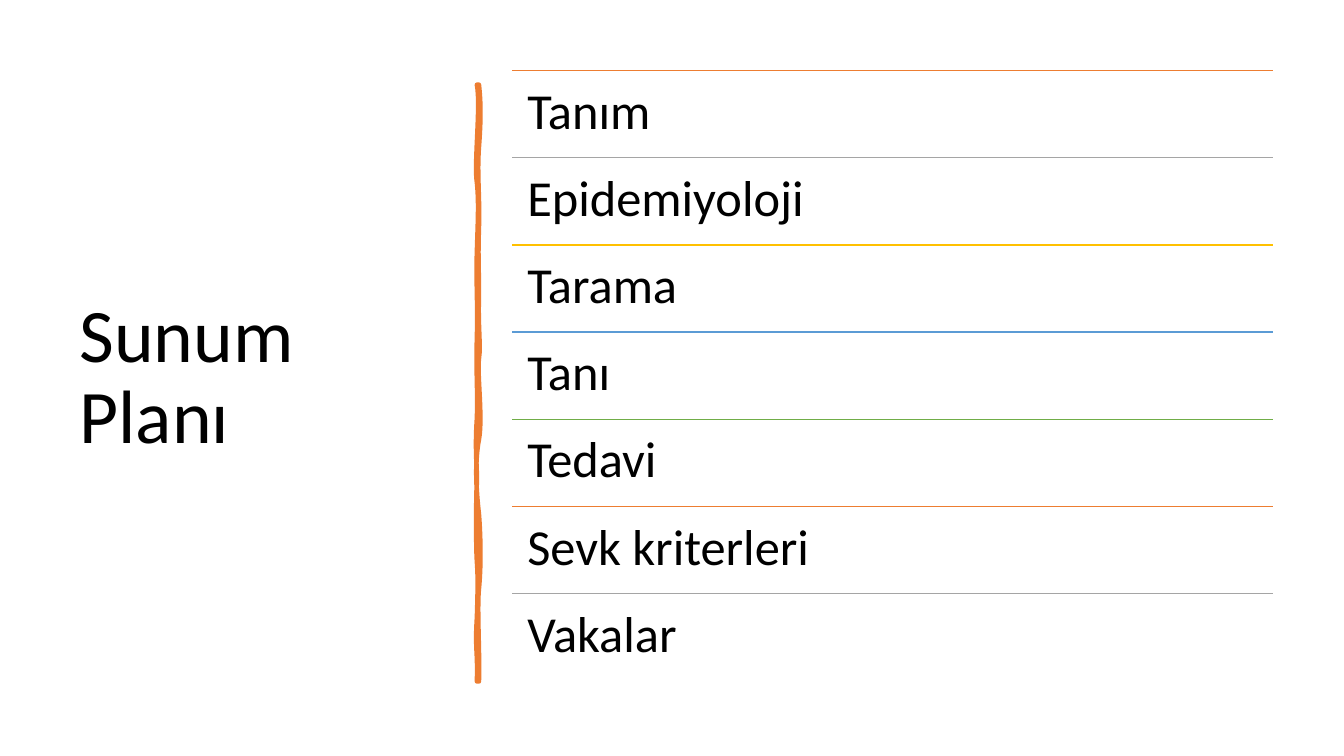
"""Builds the presentation plan slide: a title, a brush stroke and a ruled list."""
from itertools import cycle

from lxml import etree
from pptx import Presentation
from pptx import util as u
from pptx.dml.color import RGBColor
from pptx.enum import shapes, text
from pptx.oxml import ns

TITLE = "Sunum Planı"
TOPICS = ["Tanım", "Epidemiyoloji", "Tarama", "Tanı", "Tedavi", "Sevk kriterleri", "Vakalar"]
THEME = {
    "font": "Calibri", "title": 54, "topic": 36, "text": "000000", "stroke": "ED7D31",
    "rules": ["ED7D31", "A5A5A5", "FFC000", "5B9BD5", "70AD47"],
    "rule_width": 1, "stroke_width": 3.25,
}
TITLE_BOX = (0.69, 0.7, 3.74, 6.11)
LIST_LEFT, LIST_TOP, LIST_WIDTH, ROW_HEIGHT = 5.08, 0.7, 7.55, 0.865
STROKE_START = (4.75, 0.84)
STROKE_CURVES = [
    ((4.77, 1.02), (4.77, 1.19), (4.75, 1.46)),
    ((4.73, 1.73), (4.76, 1.95), (4.75, 2.26)),
    ((4.74, 2.57), (4.75, 2.62), (4.75, 2.94)),
    ((4.74, 3.25), (4.77, 3.42), (4.75, 3.56)),
    ((4.73, 3.7), (4.79, 4.14), (4.75, 4.36)),
    ((4.71, 4.57), (4.72, 4.84), (4.75, 5.1)),
    ((4.77, 5.36), (4.77, 5.64), (4.75, 5.84)),
    ((4.73, 6.03), (4.76, 6.5), (4.75, 6.76)),
    ((4.74, 6.76), (4.73, 6.76), (4.73, 6.76)),
    ((4.74, 6.46), (4.71, 6.44), (4.73, 6.13)),
    ((4.74, 5.83), (4.74, 5.7), (4.73, 5.57)),
    ((4.72, 5.44), (4.72, 4.95), (4.73, 4.77)),
    ((4.73, 4.59), (4.71, 4.45), (4.73, 4.15)),
    ((4.74, 3.86), (4.72, 3.73), (4.73, 3.35)),
    ((4.74, 2.98), (4.72, 2.81), (4.73, 2.5)),
    ((4.74, 2.18), (4.75, 2), (4.73, 1.81)),
    ((4.7, 1.63), (4.77, 1.04), (4.73, 0.84)),
]


def color(value):
    return RGBColor.from_string(value)


def add_text(slide, content, box, *, size, anchor, inset_x, inset_y):
    shape = slide.shapes.add_textbox(*map(u.Inches, box))
    frame = shape.text_frame
    frame.word_wrap = True
    frame.vertical_anchor = anchor
    frame.margin_left = frame.margin_right = u.Inches(inset_x)
    frame.margin_top = frame.margin_bottom = u.Inches(inset_y)
    paragraph = frame.paragraphs[0]
    paragraph.line_spacing = 0.9
    run = paragraph.add_run()
    run.text = content
    run.font.name = THEME["font"]
    run.font.size = u.Pt(size)
    run.font.color.rgb = color(THEME["text"])


def add_rule(slide, top, rule_color):
    left, right = u.Inches(LIST_LEFT), u.Inches(LIST_LEFT + LIST_WIDTH)
    rule = slide.shapes.add_connector(
        shapes.MSO_CONNECTOR.STRAIGHT, left, u.Inches(top), right, u.Inches(top))
    rule.line.color.rgb = color(rule_color)
    rule.line.width = u.Pt(THEME["rule_width"])
    etree.SubElement(rule._element.spPr, ns.qn("a:effectLst"))


def bend_segments(shape, curves):
    segments = list(shape._element.spPr.iter(ns.qn("a:lnTo")))
    for segment, curve in zip(segments, curves):
        bend = etree.Element(ns.qn("a:cubicBezTo"))
        for x, y in curve:
            etree.SubElement(bend, ns.qn("a:pt"), x=str(u.Inches(x) - shape.left),
                             y=str(u.Inches(y) - shape.top))
        segment.getparent().replace(segment, bend)


def add_stroke(slide):
    builder = slide.shapes.build_freeform(*map(u.Inches, STROKE_START))
    ends = [tuple(map(u.Inches, curve[-1])) for curve in STROKE_CURVES]
    builder.add_line_segments(ends, close=True)
    stroke = builder.convert_to_shape()
    bend_segments(stroke, STROKE_CURVES)
    stroke.shadow.inherit = False
    stroke.fill.solid()
    stroke.fill.fore_color.rgb = color(THEME["stroke"])
    stroke.line.color.rgb = color(THEME["stroke"])
    stroke.line.width = u.Pt(THEME["stroke_width"])
    etree.SubElement(stroke._element.spPr.find(ns.qn("a:ln")), ns.qn("a:round"))


def main():
    presentation = Presentation()
    presentation.slide_width, presentation.slide_height = u.Inches(13.33), u.Inches(7.5)
    slide = presentation.slides.add_slide(presentation.slide_layouts[6])
    add_text(slide, TITLE, TITLE_BOX, size=THEME["title"],
             anchor=text.MSO_ANCHOR.MIDDLE, inset_x=0.1, inset_y=0.05)
    add_stroke(slide)
    for row, (topic, rule_color) in enumerate(zip(TOPICS, cycle(THEME["rules"]))):
        top = LIST_TOP + row * ROW_HEIGHT
        add_rule(slide, top, rule_color)
        add_text(slide, topic, (LIST_LEFT, top, LIST_WIDTH, ROW_HEIGHT), size=THEME["topic"],
                 anchor=text.MSO_ANCHOR.TOP, inset_x=0.15, inset_y=0.15)
    presentation.save("out.pptx")


if __name__ == "__main__":
    main()
